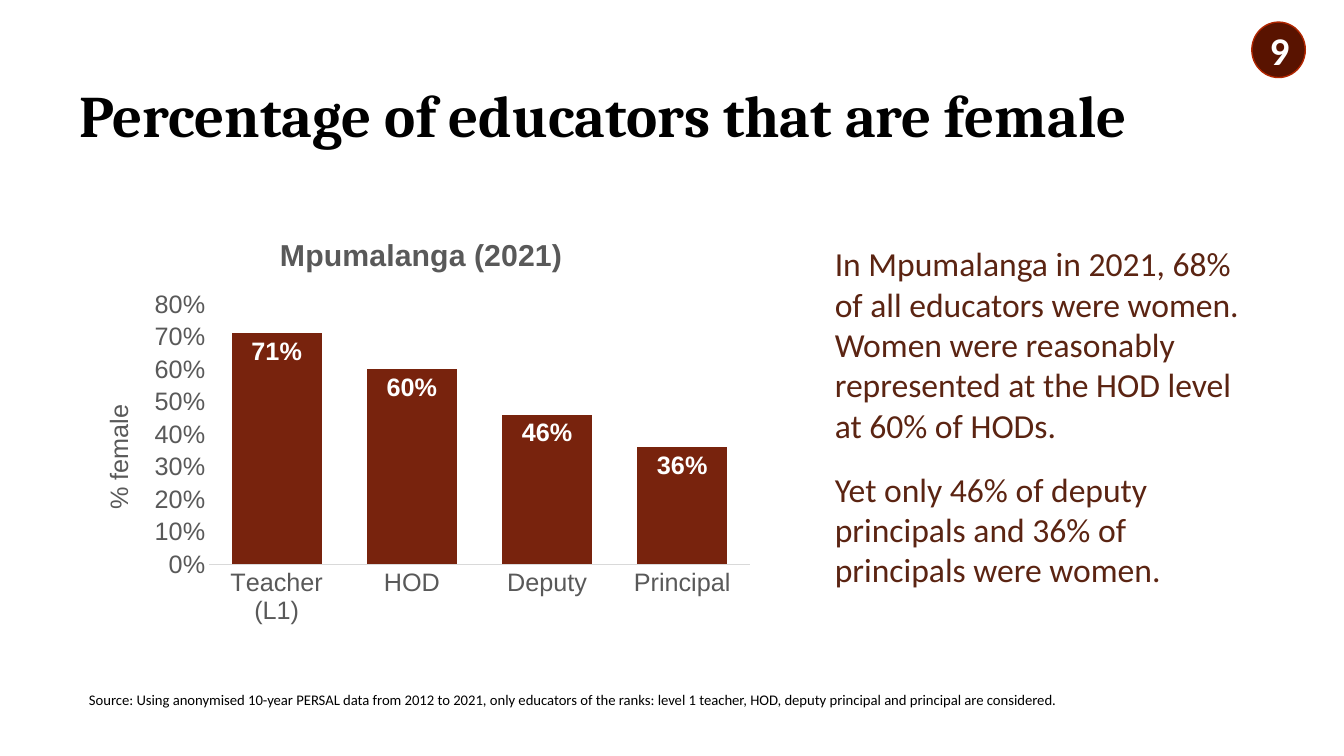
import pptx
import pptx.chart.data
import pptx.dml.color
import pptx.enum.chart
import pptx.enum.shapes
import pptx.enum.text
import pptx.oxml
import pptx.oxml.ns
import pptx.util

Pt = pptx.util.Pt
ALIGN = pptx.enum.text.PP_ALIGN
ANCHOR = pptx.enum.text.MSO_ANCHOR
GREY = "595959"


def color(value):
    return pptx.dml.color.RGBColor.from_string(value)


def style(font, name, size, value, bold=False):
    font.name = name
    font.size = Pt(size)
    font.color.rgb = color(value)
    font.bold = bold


presentation = pptx.Presentation()
presentation.slide_width = Pt(960)
presentation.slide_height = Pt(540)
slide = presentation.slides.add_slide(presentation.slide_layouts[5])

title = slide.shapes.title
title.left, title.top, title.width, title.height = Pt(49.3), Pt(32.4), Pt(828), Pt(104.4)
title.fill.solid()
title.fill.fore_color.rgb = color("FFFFFF")
title.text_frame.text = "Percentage of educators that are female"
title.text_frame.vertical_anchor = ANCHOR.MIDDLE
paragraph = title.text_frame.paragraphs[0]
paragraph.alignment = ALIGN.LEFT
paragraph.line_spacing = 0.9
style(paragraph.font, "Cambria", 42, "000000", True)

badge = slide.shapes.add_shape(
    pptx.enum.shapes.MSO_SHAPE.OVAL, Pt(894.2), Pt(15.8), Pt(38.2), Pt(39.6))
badge.shadow.inherit = False
badge.fill.solid()
badge.fill.fore_color.rgb = color("591300")
badge.line.color.rgb = color("B22600")
badge.line.width = Pt(1)
badge.text_frame.text = "9"
badge.text_frame.vertical_anchor = ANCHOR.MIDDLE
paragraph = badge.text_frame.paragraphs[0]
paragraph.alignment = ALIGN.CENTER
style(paragraph.font, "Calibri", 28, "FFFFFF", True)

findings = [
    "In Mpumalanga in 2021, 68% of all educators were women. Women were reasonably "
    "represented at the HOD level at 60% of HODs.",
    "Yet only 46% of deputy principals and 36% of principals were women.",
]
source = [
    "Source: Using anonymised 10-year PERSAL data from 2012 to 2021, only educators of the "
    "ranks: level 1 teacher, HOD, deputy principal and principal are considered.",
]
for texts, left, top, width, height, inset, size, value in [
    (findings, 589.2, 166.5, 305.3, 264.2, 7.2, 24, "5B2412"),
    (source, 56.5, 490, 846.7, 20.2, 3.6, 10.5, "000000"),
]:
    text_box = slide.shapes.add_textbox(Pt(left), Pt(top), Pt(width), Pt(height))
    frame = text_box.text_frame
    frame.word_wrap = True
    frame.margin_top = frame.margin_bottom = Pt(inset)
    frame.text = "\n".join(texts)
    for paragraph in frame.paragraphs:
        style(paragraph.font, "Calibri", size, value)
    for paragraph in frame.paragraphs[1:]:
        paragraph.space_before = Pt(17)

chart_data = pptx.chart.data.CategoryChartData(number_format="0%")
chart_data.categories = ["Teacher (L1)", "HOD", "Deputy", "Principal"]
chart_data.add_series("% female", [0.71, 0.6, 0.46, 0.36])
chart_height = 297.4
plot_height = 185.6
chart = slide.shapes.add_chart(
    pptx.enum.chart.XL_CHART_TYPE.COLUMN_CLUSTERED,
    Pt(56.5), Pt(154.9), Pt(488.9), Pt(chart_height), chart_data).chart
style(chart.font, "Arial", 18, GREY)
chart.has_legend = False

category_axis = chart.category_axis
value_axis = chart.value_axis
value_axis.has_major_gridlines = False
value_axis.minimum_scale = 0
value_axis.maximum_scale = 0.8
value_axis.major_unit = 0.1
value_axis.tick_labels.number_format = "0%"
value_axis.tick_labels.number_format_is_linked = False
value_axis.format.line.fill.background()
category_axis.format.line.color.rgb = color("D9D9D9")
category_axis.format.line.width = Pt(0.75)
for axis in (category_axis, value_axis):
    axis.major_tick_mark = pptx.enum.chart.XL_TICK_MARK.NONE
    style(axis.tick_labels.font, "Arial", 18, GREY)

for heading, text, size, bold in [
    (chart.chart_title, "Mpumalanga (2021)", 21.6, True),
    (value_axis.axis_title, "% female", 18, False),
]:
    heading.text_frame.text = text
    style(heading.text_frame.paragraphs[0].font, "Arial", size, GREY, bold)
chart.chart_title.include_in_layout = False

plot = chart.plots[0]
plot.gap_width = 50
plot.overlap = -27
plot.vary_by_categories = False
series = plot.series[0]
series.format.fill.solid()
series.format.fill.fore_color.rgb = color("78230D")
labels = series.data_labels
labels.show_value = True
labels.position = pptx.enum.chart.XL_LABEL_POSITION.INSIDE_END
labels.number_format = "0%"
labels.number_format_is_linked = False
style(labels.font, "Arial", 18, "FFFFFF", True)

plot_area = chart._chartSpace.chart.plotArea
for layout in plot_area.findall(pptx.oxml.ns.qn("c:layout")):
    plot_area.remove(layout)
plot_area.insert(0, pptx.oxml.parse_xml(
    f'<c:layout {pptx.oxml.ns.nsdecls("c")}><c:manualLayout>'
    '<c:layoutTarget val="inner"/><c:xMode val="edge"/><c:yMode val="edge"/>'
    '<c:x val="0.19"/><c:y val="0.21"/><c:w val="0.79"/>'
    f'<c:h val="{plot_height / chart_height}"/>'
    '</c:manualLayout></c:layout>'))

presentation.save("out.pptx")
